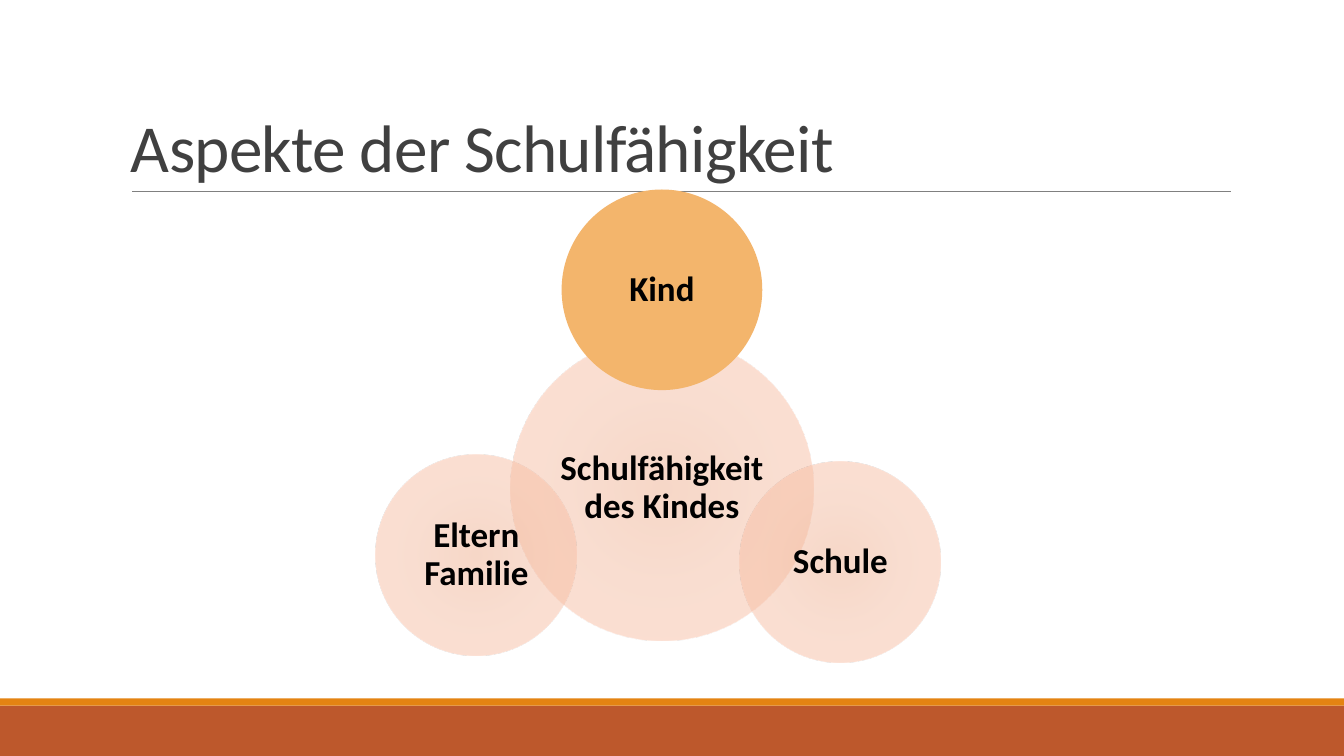
from dataclasses import dataclass

from lxml import etree
from pptx import Presentation
from pptx.dml.color import RGBColor
from pptx.enum.shapes import MSO_CONNECTOR as CONN, MSO_SHAPE as SHAPE
from pptx.enum.text import MSO_ANCHOR as ANCHOR, PP_ALIGN as ALIGN
from pptx.oxml.ns import qn
from pptx.shapes.autoshape import Shape
from pptx.slide import Slide
from pptx.util import Inches, Pt

FONT = "Calibri"
COLORS = {
    "band": "BD582C",
    "stripe": "E48312",
    "rule": "808080",
    "title": "404040",
    "label": "000000",
    "child": "F3B56C",
}
GLOW_STOPS = ((0, "F0B191"), (45, "F5BEA4"), (100, "FDC3A8"))
GLOW_ALPHA = 50


@dataclass(frozen=True)
class Circle:
    left: float
    top: float
    size: float
    lines: tuple[str, ...]
    color: str | None = None


CIRCLES = (
    Circle(5.06, 3.34, 3.01, ("Schulfähigkeit des Kindes",)),
    Circle(5.57, 1.88, 1.99, ("Kind",), "child"),
    Circle(7.34, 4.58, 1.99, ("Schule",)),
    Circle(3.73, 4.51, 1.99, ("Eltern", "Familie")),
)


def rgb(name: str) -> RGBColor:
    return RGBColor.from_string(COLORS[name])


def add_filled(s: Slide, kind: SHAPE, left: float, top: float,
               width: float, height: float, color: str) -> Shape:
    sp = s.shapes.add_shape(kind, Inches(left), Inches(top), Inches(width), Inches(height))
    sp.shadow.inherit = False
    sp.fill.solid()
    sp.fill.fore_color.rgb = rgb(color)
    sp.line.fill.background()
    return sp


def apply_glow(sp: Shape) -> None:
    """Replace the solid fill by a translucent radial gradient."""
    grad = etree.Element(qn("a:gradFill"), rotWithShape="1")
    stops = etree.SubElement(grad, qn("a:gsLst"))
    for pos, color in GLOW_STOPS:
        stop = etree.SubElement(stops, qn("a:gs"), pos=str(pos * 1000))
        clr = etree.SubElement(stop, qn("a:srgbClr"), val=color)
        etree.SubElement(clr, qn("a:alpha"), val=str(GLOW_ALPHA * 1000))
    radial = etree.SubElement(grad, qn("a:path"), {"path": "circle"})
    etree.SubElement(radial, qn("a:fillToRect"), {side: "100000" for side in "ltrb"})
    sp_pr = sp.element.spPr
    sp_pr.replace(sp_pr.find(qn("a:solidFill")), grad)


def add_circle(s: Slide, circle: Circle) -> None:
    sp = add_filled(s, SHAPE.OVAL, circle.left, circle.top, circle.size, circle.size,
                    circle.color or "child")
    if circle.color is None:
        apply_glow(sp)
    tf = sp.text_frame
    tf.word_wrap = True
    tf.vertical_anchor = ANCHOR.MIDDLE
    tf.margin_left = tf.margin_right = tf.margin_top = tf.margin_bottom = Inches(0.03)
    p = tf.paragraphs[0]
    p.alignment = ALIGN.CENTER
    p.line_spacing = 0.9
    for i, line in enumerate(circle.lines):
        if i:
            p.add_line_break()
        r = p.add_run()
        r.text = line
        r.font.name, r.font.size, r.font.bold = FONT, Pt(25), True
        r.font.color.rgb = rgb("label")


def add_title(s: Slide, text: str) -> None:
    tf = s.shapes.add_textbox(Inches(1.2), Inches(0.31), Inches(11), Inches(1.59)).text_frame
    tf.word_wrap = True
    tf.vertical_anchor = ANCHOR.BOTTOM
    p = tf.paragraphs[0]
    p.line_spacing = 0.85
    r = p.add_run()
    r.text = text
    r.font.name, r.font.size = FONT, Pt(48)
    r.font.color.rgb = rgb("title")
    r.font._element.set("spc", "-50")


def add_rule(s: Slide) -> None:
    line = s.shapes.add_connector(CONN.STRAIGHT, Inches(1.31), Inches(1.9),
                                  Inches(12.21), Inches(1.9))
    line.line.color.rgb = rgb("rule")
    line.line.width = Pt(0.5)
    etree.SubElement(line._element.spPr, qn("a:effectLst"))


def main() -> None:
    prs = Presentation()
    prs.slide_width, prs.slide_height = Inches(13.33), Inches(7.5)
    s = prs.slides.add_slide(prs.slide_layouts[6])
    add_filled(s, SHAPE.RECTANGLE, 0, 7, 13.33, 0.5, "band")
    add_filled(s, SHAPE.RECTANGLE, 0, 6.93, 13.33, 0.07, "stripe")
    add_rule(s)
    add_title(s, "Aspekte der Schulfähigkeit")
    for circle in CIRCLES:
        add_circle(s, circle)
    prs.save("out.pptx")


if __name__ == "__main__":
    main()
